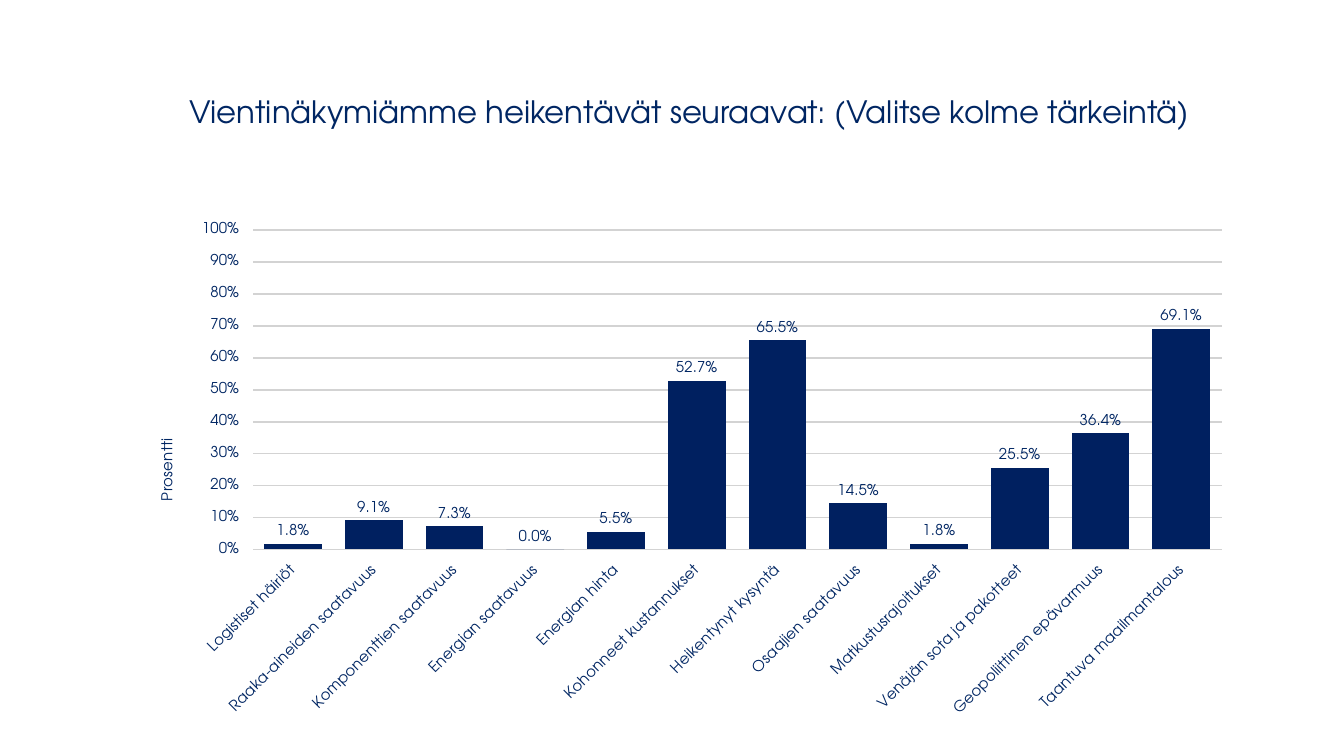
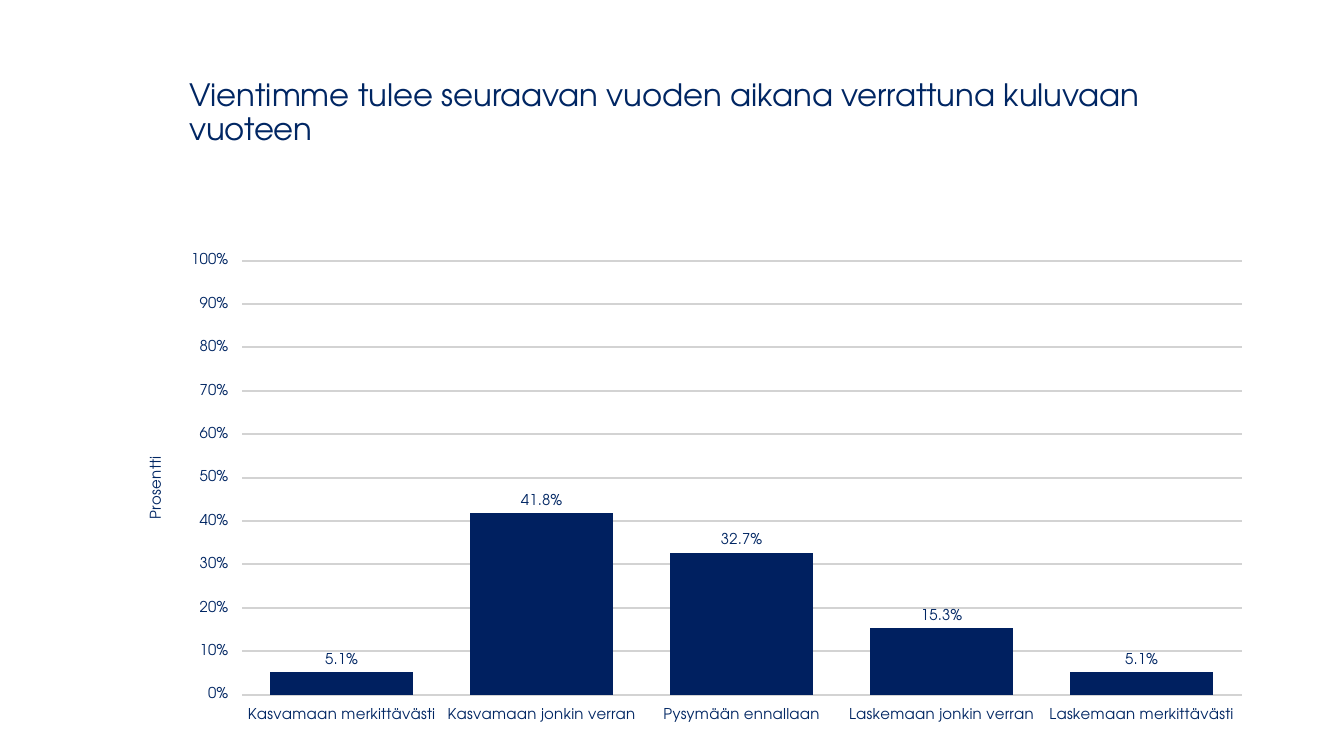
from lxml import etree
from pptx import Presentation
from pptx import util as u
from pptx.chart.data import CategoryChartData
from pptx.dml.color import RGBColor
from pptx.enum import chart as charts, text
from pptx.oxml import ns

PX = 9144
FONT = "TeX Gyre Adventor"
TITLE_BLUE, BAR_BLUE, GRID_GREY = "002663", "002060", "D3D3D3"
TITLE_BOX = (131, 30, 795, 109)

EXPORT_RISKS = {
    "Logistiset häiriöt": 0.018,
    "Raaka-aineiden saatavuus": 0.091,
    "Komponenttien saatavuus": 0.073,
    "Energian saatavuus": 0,
    "Energian hinta": 0.055,
    "Kohonneet kustannukset": 0.527,
    "Heikentynyt kysyntä": 0.655,
    "Osaajien saatavuus": 0.145,
    "Matkustusrajoitukset": 0.018,
    "Venäjän sota ja pakotteet": 0.255,
    "Geopoliittinen epävarmuus": 0.364,
    "Taantuva maailmantalous": 0.691,
}
EXPORT_OUTLOOK = {
    "Kasvamaan merkittävästi": 0.051,
    "Kasvamaan jonkin verran": 0.418,
    "Pysymään ennallaan": 0.327,
    "Laskemaan jonkin verran": 0.153,
    "Laskemaan merkittävästi": 0.051,
}


def rgb(value):
    """Turn a hex string into a colour."""
    return RGBColor.from_string(value)


def emu(box):
    """Turn a box in px into EMU."""
    return [length * PX for length in box]


def style_font(font, size):
    """Apply the shared typeface and text colour."""
    font.name, font.size, font.bold = FONT, u.Pt(size), False
    font.color.rgb = rgb(TITLE_BLUE)


def add_question(slide, box, wording):
    """Place the survey question as the slide's heading."""
    frame = slide.shapes.add_textbox(*emu(box)).text_frame
    frame.word_wrap = True
    frame.vertical_anchor = text.MSO_ANCHOR.MIDDLE
    frame.text = wording
    question = frame.paragraphs[0]
    question.line_spacing = 0.9
    style_font(question.runs[0].font, 16.5)


def fix_plot(chart, box, plot):
    """Pin the inner plot area, given in px relative to the chart box."""
    area = chart.element.find(".//" + ns.qn("c:plotArea"))
    for layout in area.findall(ns.qn("c:layout")):
        area.remove(layout)
    layout = etree.Element(ns.qn("c:layout"))
    area.insert(0, layout)
    manual = etree.SubElement(layout, ns.qn("c:manualLayout"))
    width, height = box[2:]
    shares = [length / side for length, side in zip(plot, (width, height) * 2)]
    settings = [("layoutTarget", "inner"), ("xMode", "edge"), ("yMode", "edge")]
    settings += zip("xywh", (f"{share:.4f}" for share in shares))
    for tag, value in settings:
        etree.SubElement(manual, ns.qn("c:" + tag)).set("val", value)


def style_axes(chart, slant):
    """Format both axes, turning the category labels by slant degrees."""
    answers, percent = chart.category_axis, chart.value_axis
    for axis in (answers, percent):
        style_font(axis.tick_labels.font, 8)
        axis.format.line.fill.background()
    answers.has_major_gridlines = False
    turn = answers.tick_labels.font._element.getparent().getparent().getparent()
    turn.find(ns.qn("a:bodyPr")).set("rot", str(slant * 60000))

    percent.minimum_scale, percent.maximum_scale, percent.major_unit = 0, 1, 0.1
    percent.tick_labels.number_format = "0%"
    percent.tick_labels.number_format_is_linked = False
    grid = percent.major_gridlines.format.line
    grid.color.rgb, grid.width = rgb(GRID_GREY), u.Pt(1)
    percent.axis_title.text_frame.text = "Prosentti"
    style_font(percent.axis_title.text_frame.paragraphs[0].runs[0].font, 8)


def add_answers(slide, box, plot, shares, slant):
    """Draw the column chart of answer shares."""
    data = CategoryChartData(number_format="0.0%")
    data.categories = list(shares)
    data.add_series("Series 1", list(shares.values()))
    chart = slide.shapes.add_chart(
        charts.XL_CHART_TYPE.COLUMN_CLUSTERED, *emu(box), data).chart
    chart.has_legend = chart.has_title = False
    style_font(chart.font, 18)
    style_axes(chart, slant)

    columns = chart.plots[0]
    columns.gap_width, columns.overlap = 40, -2
    columns.vary_by_categories = False
    bars = columns.series[0]
    bars.format.fill.solid()
    bars.format.fill.fore_color.rgb = rgb(BAR_BLUE)
    labels = bars.data_labels
    labels.show_value = True
    labels.number_format, labels.number_format_is_linked = "0.0%", False
    labels.position = charts.XL_LABEL_POSITION.OUTSIDE_END
    style_font(labels.font, 8)
    fix_plot(chart, box, plot)


def add_survey_slide(deck, wording, box, plot, shares, slant=0):
    """Add one slide with a survey question and its answers."""
    slide = deck.slides.add_slide(deck.slide_layouts[6])
    add_question(slide, TITLE_BOX, wording)
    add_answers(slide, box, plot, shares, slant)


def main():
    """Build the two survey slides."""
    deck = Presentation()
    deck.slide_width, deck.slide_height = u.Pt(720), u.Pt(405)
    add_survey_slide(
        deck, "Vientinäkymiämme heikentävät seuraavat: (Valitse kolme tärkeintä)",
        (99, 158, 827, 383), (89, 13, 721, 238), EXPORT_RISKS, slant=-45)
    add_survey_slide(
        deck, "Vientimme tulee seuraavan vuoden aikana verrattuna kuluvaan vuoteen",
        (91, 181, 850, 363), (89, 13, 744, 323), EXPORT_OUTLOOK)
    deck.save("out.pptx")


if __name__ == "__main__":
    main()
